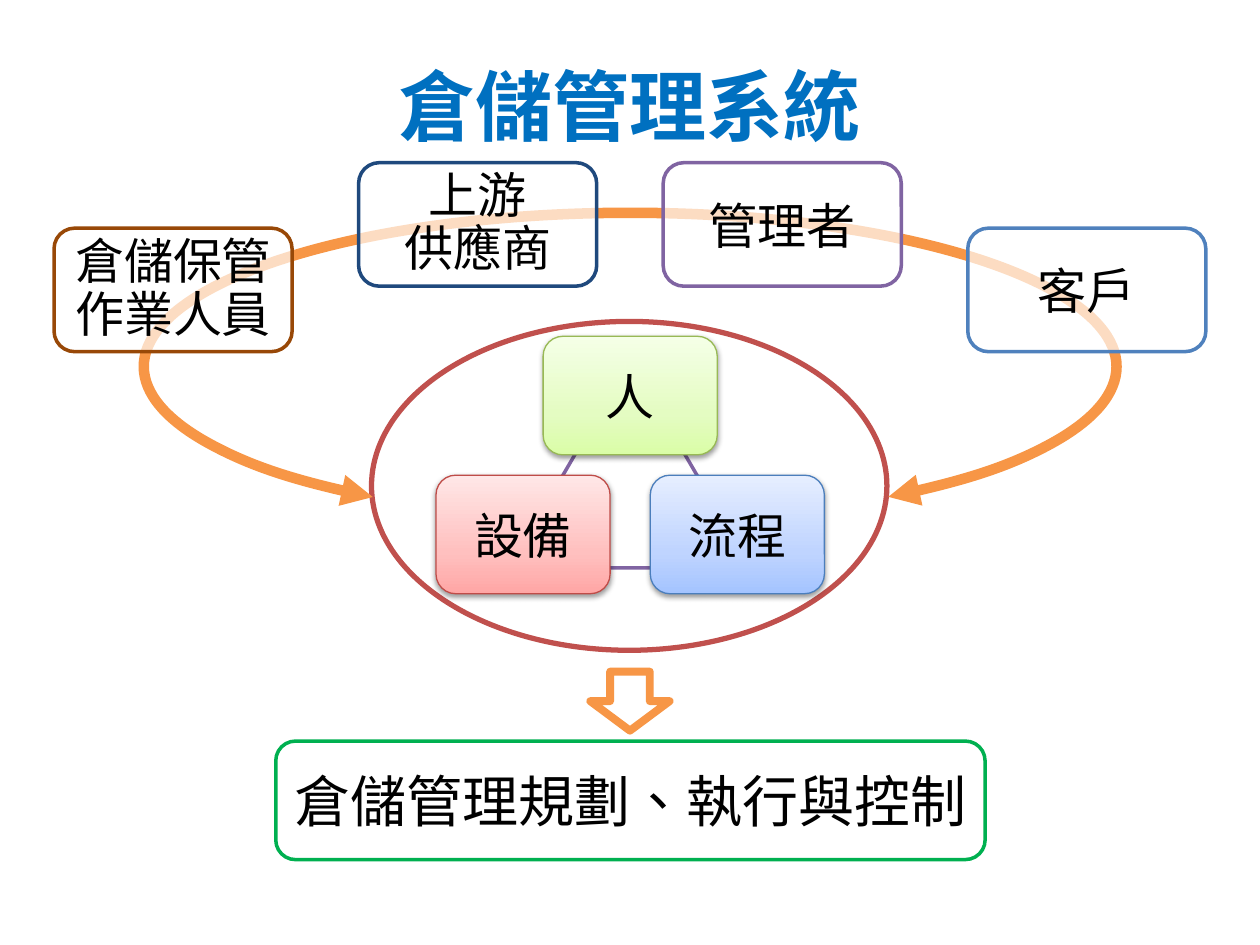
import dataclasses
import typing

import lxml.etree
import pptx
import pptx.dml.color
import pptx.enum.shapes
import pptx.enum.text
import pptx.oxml.ns
import pptx.util

Cm = pptx.util.Cm
Pt = pptx.util.Pt
RGBColor = pptx.dml.color.RGBColor
MSO_SHAPE = pptx.enum.shapes.MSO_SHAPE
qn = pptx.oxml.ns.qn

FONT = "Roboto Slab"
BLACK = RGBColor(0x00, 0x00, 0x00)
WHITE = RGBColor(0xFF, 0xFF, 0xFF)
TITLE_BLUE = RGBColor(0x00, 0x70, 0xC0)
NAVY = RGBColor(0x1F, 0x49, 0x7D)
BLUE = RGBColor(0x4F, 0x81, 0xBD)
BROWN = RGBColor(0x98, 0x48, 0x07)
PURPLE = RGBColor(0x80, 0x64, 0xA2)
RED = RGBColor(0xC0, 0x50, 0x4D)
GREEN = RGBColor(0x00, 0xB0, 0x50)
ORANGE = RGBColor(0xF7, 0x96, 0x46)
GREEN_EDGE = RGBColor(0x98, 0xB9, 0x55)
RED_EDGE = RGBColor(0xBF, 0x4C, 0x48)
BLUE_EDGE = RGBColor(0x4B, 0x7E, 0xBC)
GREEN_STOPS = (RGBColor(0xDA, 0xFD, 0xA7), RGBColor(0xE4, 0xFC, 0xC2), RGBColor(0xF5, 0xFF, 0xE7))
RED_STOPS = (RGBColor(0xFF, 0xA6, 0xA5), RGBColor(0xFF, 0xC0, 0xBF), RGBColor(0xFF, 0xE7, 0xE7))
BLUE_STOPS = (RGBColor(0xA4, 0xC4, 0xFF), RGBColor(0xBF, 0xD4, 0xFF), RGBColor(0xE6, 0xEE, 0xFF))
STOP_POSITIONS = (0, 35, 100)


@dataclasses.dataclass(frozen=True)
class Role:
    lines: tuple[str, ...]
    top: float
    color: RGBColor


@dataclasses.dataclass(frozen=True)
class Element:
    text: str
    left: float
    top: float
    edge: RGBColor
    stops: tuple[RGBColor, ...]


ROLES = (
    Role(("倉儲保管", "作業人員"), 4.6, BROWN),
    Role(("上游", "供應商"), 3.28, NAVY),
    Role(("管理者",), 3.28, PURPLE),
    Role(("客戶",), 4.6, BLUE),
)
ROLE_LEFT, ROLE_STEP, ROLE_W, ROLE_H = 1.09, 6.14, 4.8, 2.49

ELEMENTS = (
    Element("人", 10.95, 6.78, GREEN_EDGE, GREEN_STOPS),
    Element("設備", 8.79, 9.58, RED_EDGE, RED_STOPS),
    Element("流程", 13.11, 9.58, BLUE_EDGE, BLUE_STOPS),
)
ELEMENT_W, ELEMENT_H = 3.51, 2.39


def write(tf: typing.Any, lines: tuple[str, ...], size: float,
          color: RGBColor = BLACK, bold: bool = False) -> None:
    tf.word_wrap = True
    tf.vertical_anchor = pptx.enum.text.MSO_ANCHOR.MIDDLE
    for i, line in enumerate(lines):
        p = tf.add_paragraph() if i else tf.paragraphs[0]
        p.alignment = pptx.enum.text.PP_ALIGN.CENTER
        if len(lines) > 1:
            p.line_spacing = 0.9
        r = p.add_run()
        r.text = line
        r.font.name = FONT
        r.font.size = Pt(size)
        r.font.bold = bold
        r.font.color.rgb = color
        rPr = r.font._element
        rPr.set("lang", "zh-TW")
        lxml.etree.SubElement(rPr, qn("a:ea"), typeface=FONT)


def add_shape(s: typing.Any, kind: typing.Any, left: float, top: float, width: float,
              height: float, line: RGBColor, weight: float) -> typing.Any:
    sp = s.shapes.add_shape(kind, Cm(left), Cm(top), Cm(width), Cm(height))
    sp.shadow.inherit = False
    sp.fill.solid()
    sp.fill.fore_color.rgb = WHITE
    sp.line.color.rgb = line
    sp.line.width = Pt(weight)
    tf = sp.text_frame
    tf.margin_left = tf.margin_right = tf.margin_top = tf.margin_bottom = 0
    return sp


def add_color(parent: typing.Any, color: RGBColor, alpha: int = 100) -> None:
    clr = lxml.etree.SubElement(parent, qn("a:srgbClr"), val=str(color))
    if alpha < 100:
        lxml.etree.SubElement(clr, qn("a:alpha"), val=str(alpha * 1000))


def add_role(s: typing.Any, index: int, role: Role) -> None:
    sp = add_shape(s, MSO_SHAPE.ROUNDED_RECTANGLE, ROLE_LEFT + index * ROLE_STEP,
                   role.top, ROLE_W, ROLE_H, role.color, 2)
    solid = sp._element.spPr.find(qn("a:solidFill"))
    solid.clear()
    add_color(solid, WHITE, 67)
    write(sp.text_frame, role.lines, 28)


def add_element(s: typing.Any, item: Element) -> None:
    sp = add_shape(s, MSO_SHAPE.ROUNDED_RECTANGLE, item.left, item.top,
                   ELEMENT_W, ELEMENT_H, item.edge, 0.75)
    sp.fill.gradient()
    sp.fill.gradient_angle = 90
    spPr = sp._element.spPr
    stops = spPr.find(qn("a:gradFill")).find(qn("a:gsLst"))
    stops.clear()
    for pos, color in zip(STOP_POSITIONS, item.stops):
        add_color(lxml.etree.SubElement(stops, qn("a:gs"), pos=str(pos * 1000)), color)
    shadow = lxml.etree.SubElement(
        spPr.find(qn("a:effectLst")), qn("a:outerShdw"), blurRad=str(Pt(3.1)),
        dist=str(Pt(1.6)), dir="5400000", rotWithShape="0")
    add_color(shadow, BLACK, 38)
    write(sp.text_frame, (item.text,), 28)


def add_arc(s: typing.Any) -> None:
    sp = add_shape(s, MSO_SHAPE.ARC, 2.9, 4.29, 19.61, 6.2, ORANGE, 6)
    sp.fill.background()
    sp.adjustments[0] = 91.869
    sp.adjustments[1] = 16.075
    ln = sp._element.spPr.find(qn("a:ln"))
    for end in ("a:headEnd", "a:tailEnd"):
        lxml.etree.SubElement(ln, qn(end), type="triangle")


def main() -> None:
    prs = pptx.Presentation()
    prs.slide_width, prs.slide_height = Cm(25.4), Cm(19.05)
    s = prs.slides.add_slide(prs.slide_layouts[5])
    title = s.shapes.title
    title.left, title.top, title.width, title.height = Cm(1.27), Cm(0.53), Cm(22.86), Cm(3.18)
    write(title.text_frame, ("倉儲管理系統",), 44, TITLE_BLUE, True)

    result = add_shape(s, MSO_SHAPE.ROUNDED_RECTANGLE, 5.56, 14.94, 14.3, 2.39, GREEN, 2)
    write(result.text_frame, ("倉儲管理規劃、執行與控制",), 32)
    add_shape(s, MSO_SHAPE.OVAL, 7.49, 6.48, 10.39, 6.63, RED, 3)
    add_shape(s, MSO_SHAPE.ISOSCELES_TRIANGLE, 10.26, 7.26, 4.88, 4.19, PURPLE, 2)
    for item in ELEMENTS:
        add_element(s, item)
    add_arc(s)
    for index, role in enumerate(ROLES):
        add_role(s, index, role)
    add_shape(s, MSO_SHAPE.DOWN_ARROW, 11.9, 13.54, 1.6, 1.19, ORANGE, 4.5)
    prs.save("out.pptx")


if __name__ == "__main__":
    main()
